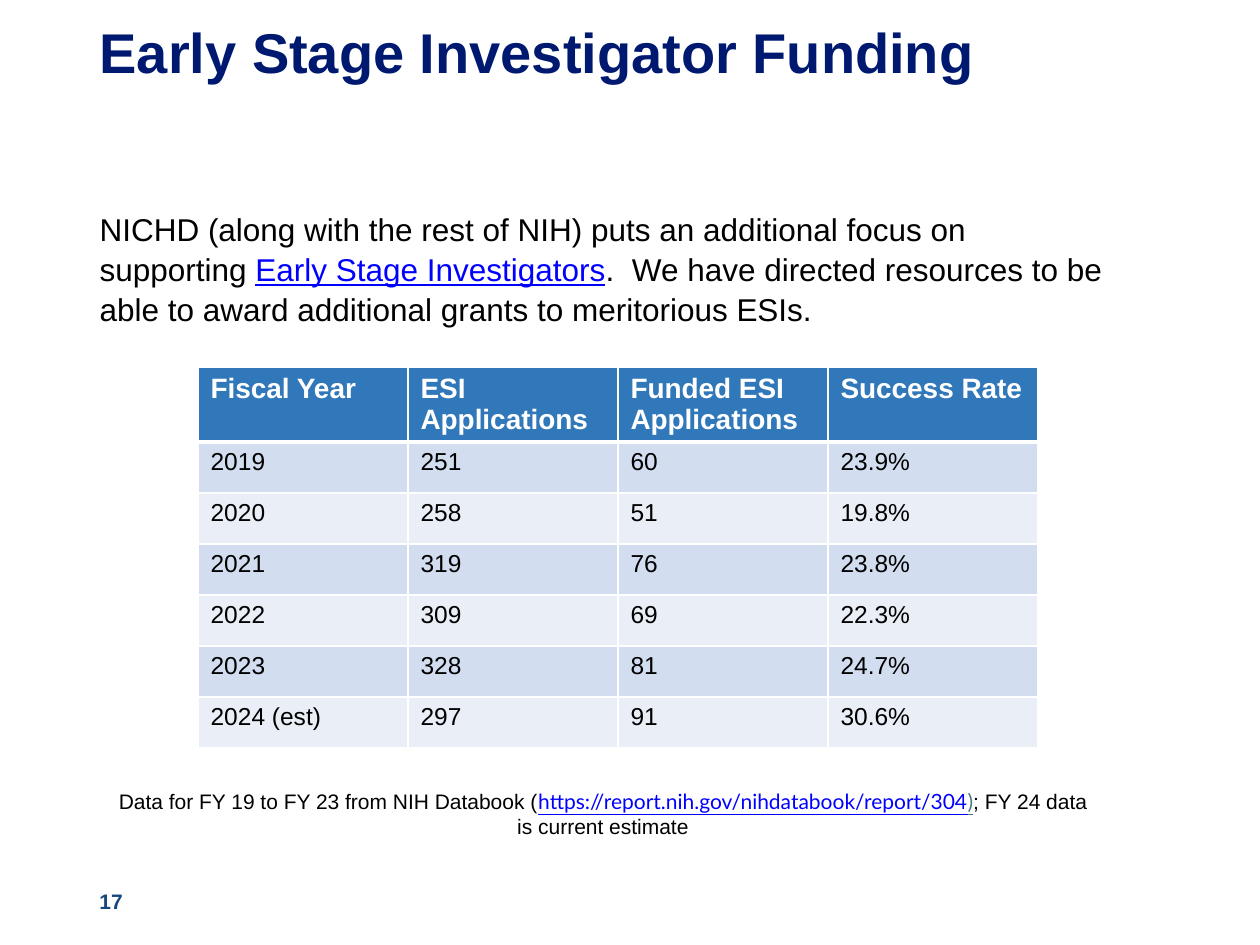
"""Builds the Early Stage Investigator funding slide."""
import pptx
import pptx.dml.color
import pptx.enum.text
import pptx.oxml
import pptx.oxml.ns
import pptx.util

SCALE = 914400 // 126
ANCHOR = pptx.enum.text.MSO_ANCHOR
ALIGN = pptx.enum.text.PP_ALIGN
NAVY, BLACK, WHITE, LINK = "001970", "000000", "FFFFFF", "0000FF"
HEADER_FILL, BANDS = "3078BA", ("D2DEEF", "EAEFF7")

TITLE = [("Early Stage Investigator Funding", {})]
INTRO = [
    ("NICHD (along with the rest of NIH) puts an additional focus on supporting ", {}),
    ("Early Stage Investigators", {"color": LINK, "underline": True}),
    (".  We have directed resources to be able to award additional grants to meritorious ESIs.", {}),
]
SOURCE_NOTE = [
    ("Data for FY 19 to FY 23 from NIH Databook (", {}),
    ("https://report.nih.gov/nihdatabook/report/304",
     {"font": "Lato", "color": LINK, "underline": True}),
    (")", {"font": "Lato", "color": "467886", "underline": True}),
    ("; FY 24 data is current estimate", {}),
]
PAGE_NUMBER = [("17", {})]
FUNDING = [
    ("Fiscal Year", "ESI Applications", "Funded ESI Applications", "Success Rate"),
    ("2019", "251", "60", "23.9%"),
    ("2020", "258", "51", "19.8%"),
    ("2021", "319", "76", "23.8%"),
    ("2022", "309", "69", "22.3%"),
    ("2023", "328", "81", "24.7%"),
    ("2024 (est)", "297", "91", "30.6%"),
]
TABLE_LEFT, TABLE_TOP, COLUMN_WIDTH = 198, 367, 210
HEADER_HEIGHT, ROW_HEIGHT = 74, 51


def px(length):
    return pptx.util.Emu(length * SCALE)


def rgb(color):
    return pptx.dml.color.RGBColor.from_string(color)


def write(frame, spans, size, color=BLACK, bold=False, align=ALIGN.LEFT,
          anchor=ANCHOR.TOP, spacing=1.0):
    frame.word_wrap = True
    frame.auto_size = pptx.enum.text.MSO_AUTO_SIZE.NONE
    frame.vertical_anchor = anchor
    fill_paragraph(frame.paragraphs[0], spans, size, color, bold, align, spacing)


def fill_paragraph(para, spans, size, color=BLACK, bold=False, align=ALIGN.LEFT, spacing=1.0):
    properties = para._p.get_or_add_pPr()
    properties.set("marL", "0")
    properties.set("indent", "0")
    properties.append(pptx.oxml.parse_xml(f"<a:buNone {pptx.oxml.ns.nsdecls('a')}/>"))
    para.alignment = align
    para.line_spacing = spacing
    para.space_before = pptx.util.Pt(0)
    for text, style in spans:
        span = para.add_run()
        span.text = text
        span.font.name = style.get("font", "Arial")
        span.font.size = pptx.util.Pt(size)
        span.font.bold = bold
        span.font.underline = style.get("underline", False)
        span.font.color.rgb = rgb(style.get("color", color))


def place(shape, left, top, width, height):
    shape.left, shape.top, shape.width, shape.height = map(px, (left, top, width, height))


def add_text(page, bounds, spans, size, **style):
    box = page.shapes.add_textbox(*map(px, bounds))
    write(box.text_frame, spans, size, **style)


def set_borders(cell, widths):
    properties = cell._tc.get_or_add_tcPr()
    for position, (side, points) in enumerate(widths.items()):
        border = pptx.oxml.parse_xml(
            f'<a:ln{side} {pptx.oxml.ns.nsdecls("a")} w="{points * 12700}">'
            f'<a:solidFill><a:srgbClr val="{WHITE}"/></a:solidFill></a:ln{side}>')
        properties.insert(position, border)


def add_funding_table(page):
    row_count, column_count = len(FUNDING), len(FUNDING[0])
    height = HEADER_HEIGHT + ROW_HEIGHT * (row_count - 1)
    bounds = (TABLE_LEFT, TABLE_TOP, COLUMN_WIDTH * column_count, height)
    table = page.shapes.add_table(row_count, column_count, *map(px, bounds)).table
    for column in table.columns:
        column.width = px(COLUMN_WIDTH)
    for row_index, values in enumerate(FUNDING):
        header = row_index == 0
        table.rows[row_index].height = px(HEADER_HEIGHT if header else ROW_HEIGHT)
        for column_index, value in enumerate(values):
            cell = table.cell(row_index, column_index)
            cell.fill.solid()
            cell.fill.fore_color.rgb = rgb(HEADER_FILL if header else BANDS[(row_index - 1) % 2])
            fill_paragraph(cell.text_frame.paragraphs[0], [(value, {})],
                           16 if header else 14, WHITE if header else BLACK, header)
            set_borders(cell, {"L": 1, "R": 1, "T": 3 if row_index == 1 else 1,
                               "B": 3 if header else 1})


def main():
    deck = pptx.Presentation()
    deck.slide_width, deck.slide_height = px(1260), px(945)
    page = deck.slides.add_slide(deck.slide_layouts[1])
    title, body = page.shapes.title, page.placeholders[1]
    place(title, 87, 19, 1086, 165)
    write(title.text_frame, TITLE, 32, color=NAVY, bold=True, spacing=0.9)
    place(body, 87, 202, 1043, 165)
    write(body.text_frame, INTRO, 18, spacing=1.05)
    add_funding_table(page)
    add_text(page, (96, 772, 1014, 73), SOURCE_NOTE, 12,
             align=ALIGN.CENTER, anchor=ANCHOR.BOTTOM)
    add_text(page, (87, 876, 378, 50), PAGE_NUMBER, 12,
             color="17467D", bold=True, anchor=ANCHOR.MIDDLE)
    deck.save("out.pptx")


if __name__ == "__main__":
    main()
